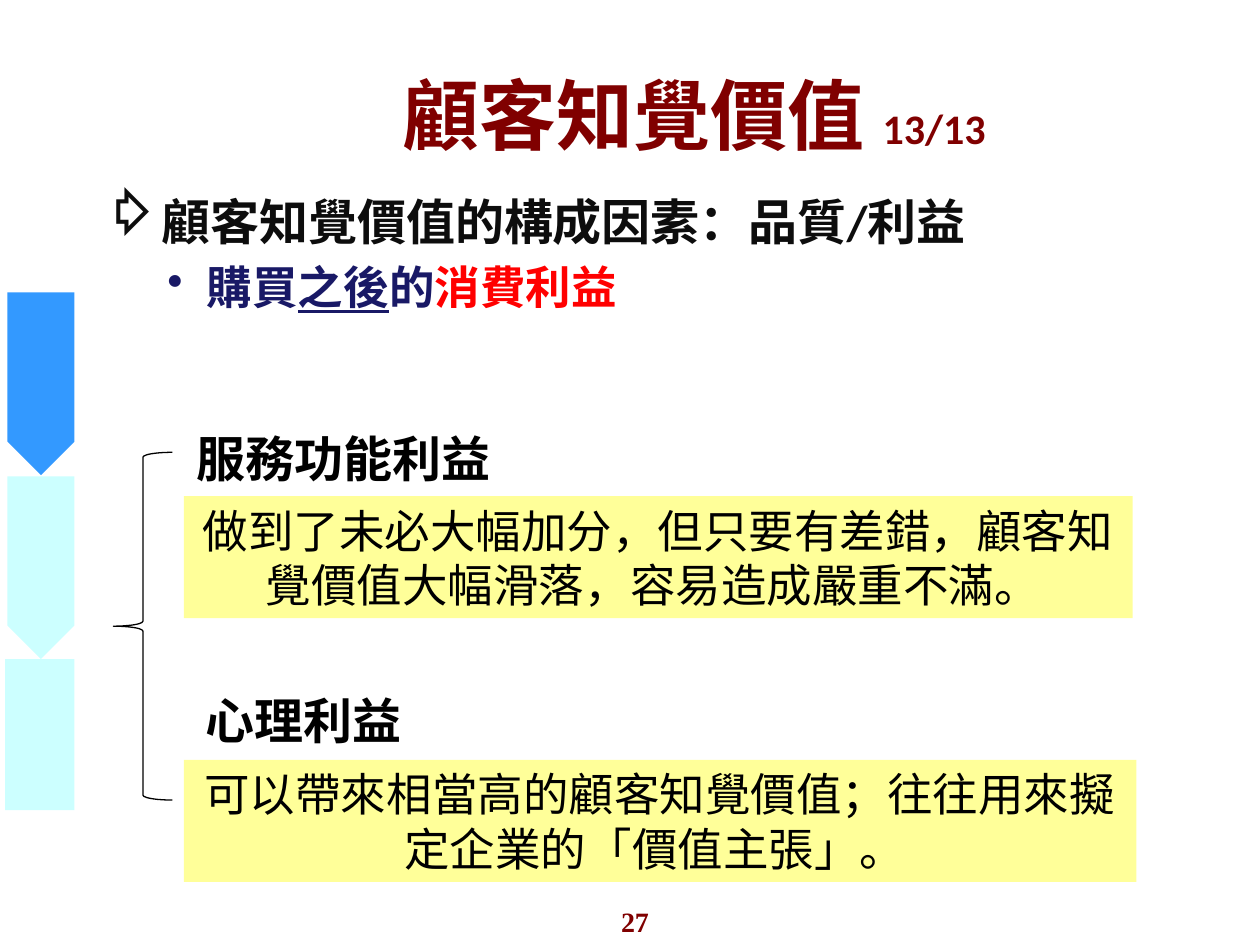
from dataclasses import dataclass

import lxml.etree
import pptx
import pptx.dml.color
import pptx.enum.shapes
import pptx.enum.text
import pptx.oxml.ns
import pptx.util

Pt = pptx.util.Pt
MSO = pptx.enum.shapes.MSO_SHAPE
ALIGN = pptx.enum.text.PP_ALIGN
ANCHOR = pptx.enum.text.MSO_ANCHOR
COLORS = {
    "maroon": "800000", "ink": "0D0D0D", "navy": "191966", "red": "FF0000",
    "black": "000000", "yellow": "FFFF99", "blue": "3399FF", "aqua": "CCFFFF",
}
SERIF = "Times New Roman"
SANS = "Calibri"


@dataclass
class Box:
    left: float
    top: float
    width: float
    height: float

    def lengths(self) -> tuple:
        return tuple(Pt(v) for v in (self.left, self.top, self.width, self.height))


@dataclass
class Benefit:
    name: str
    name_box: Box
    note: str
    note_box: Box


@dataclass
class Step:
    kind: MSO
    box: Box
    color: str
    rotation: float = 0


BENEFITS = [
    Benefit("服務功能利益", Box(105.1, 241.2, 182.2, 41),
            "做到了未必大幅加分，但只要有差錯，顧客知覺價值大幅滑落，容易造成嚴重不滿。 ",
            Box(105.1, 283.5, 542.2, 69.8)),
    Benefit("心理利益", Box(110.2, 391, 126.7, 41),
            "可以帶來相當高的顧客知覺價值；往往用來擬定企業的「價值主張」。 ",
            Box(105.1, 434.2, 544.3, 69.8)),
]
STEPS = [
    Step(MSO.PENTAGON, Box(-28.8, 200.2, 104.4, 38.2), "blue", 90),
    Step(MSO.PENTAGON, Box(-28.8, 305.3, 104.4, 38.2), "aqua", 90),
    Step(MSO.RECTANGLE, Box(2.9, 376.6, 39.6, 86.4), "aqua"),
]


def rgb(name: str) -> pptx.dml.color.RGBColor:
    return pptx.dml.color.RGBColor.from_string(COLORS[name])


def add_run(p, text: str, *, size: float, color: str, font: str = SANS,
            bold: bool = True, underline: bool = False) -> None:
    r = p.add_run()
    r.text = text
    r.font.size = Pt(size)
    r.font.name = font
    r.font.bold = bold
    r.font.underline = underline
    r.font.color.rgb = rgb(color)


def add_text_box(slide, box: Box, align=ALIGN.LEFT, anchor=ANCHOR.TOP):
    tf = slide.shapes.add_textbox(*box.lengths()).text_frame
    tf.word_wrap = True
    tf.vertical_anchor = anchor
    tf.paragraphs[0].alignment = align
    return tf


def add_bullet(p, char: str, color: str, margin: float, hang: float) -> None:
    qn = pptx.oxml.ns.qn
    pPr = p._p.get_or_add_pPr()
    pPr.set("marL", str(Pt(margin)))
    pPr.set("indent", str(-Pt(hang)))
    clr = lxml.etree.SubElement(pPr, qn("a:buClr"))
    lxml.etree.SubElement(clr, qn("a:srgbClr")).set("val", COLORS[color])
    lxml.etree.SubElement(pPr, qn("a:buChar")).set("char", char)


def add_filled(slide, kind: MSO, box: Box, color: str):
    sp = slide.shapes.add_shape(kind, *box.lengths())
    sp.shadow.inherit = False
    sp.fill.solid()
    sp.fill.fore_color.rgb = rgb(color)
    sp.line.fill.background()
    return sp


def add_benefit(slide, benefit: Benefit) -> None:
    tf = add_text_box(slide, benefit.name_box, ALIGN.CENTER)
    add_run(tf.paragraphs[0], benefit.name, size=28, color="black", font=SERIF)
    sp = add_filled(slide, MSO.RECTANGLE, benefit.note_box, "yellow")
    tf = sp.text_frame
    tf.word_wrap = True
    tf.vertical_anchor = ANCHOR.MIDDLE
    p = tf.paragraphs[0]
    p.alignment = ALIGN.CENTER
    add_run(p, benefit.note, size=26, color="black", font=SERIF, bold=False)


def add_step(slide, step: Step) -> None:
    sp = add_filled(slide, step.kind, step.box, step.color)
    sp.rotation = step.rotation


def main() -> None:
    prs = pptx.Presentation()
    prs.slide_width, prs.slide_height = Pt(720), Pt(540)
    slide = prs.slides.add_slide(prs.slide_layouts[6])

    # Page number
    tf = add_text_box(slide, Box(347.8, 513.4, 59.8, 26.6))
    add_run(tf.paragraphs[0], "27", size=16, color="maroon", font=SERIF)

    # Title
    tf = add_text_box(slide, Box(133.2, 20.2, 527, 90), ALIGN.CENTER, ANCHOR.MIDDLE)
    add_run(tf.paragraphs[0], "顧客知覺價值 ", size=44, color="maroon")
    add_run(tf.paragraphs[0], "13/13", size=24, color="maroon")

    # Outline
    tf = add_text_box(slide, Box(52.6, 105.8, 625, 107.3))
    p = tf.paragraphs[0]
    add_bullet(p, "⇨", "ink", 27, 27)
    add_run(p, "顧客知覺價值的構成因素：品質/利益", size=28, color="ink")
    p = tf.add_paragraph()
    p.level = 1
    p.space_before = Pt(5.2)
    add_bullet(p, "•", "navy", 58.5, 22.5)
    add_run(p, "購買", size=26, color="navy")
    add_run(p, "之後", size=26, color="navy", underline=True)
    add_run(p, "的", size=26, color="navy")
    add_run(p, "消費利益", size=26, color="red")

    # Brace joining the two benefits
    brace = slide.shapes.add_shape(MSO.LEFT_BRACE, *Box(64.8, 258.5, 33.8, 198.7).lengths())
    brace.shadow.inherit = False
    brace.fill.background()
    brace.line.color.rgb = rgb("black")
    brace.line.width = Pt(0.75)

    for benefit in BENEFITS:
        add_benefit(slide, benefit)

    # Progress arrows at the left edge
    for step in STEPS:
        add_step(slide, step)

    prs.save("out.pptx")


if __name__ == "__main__":
    main()
